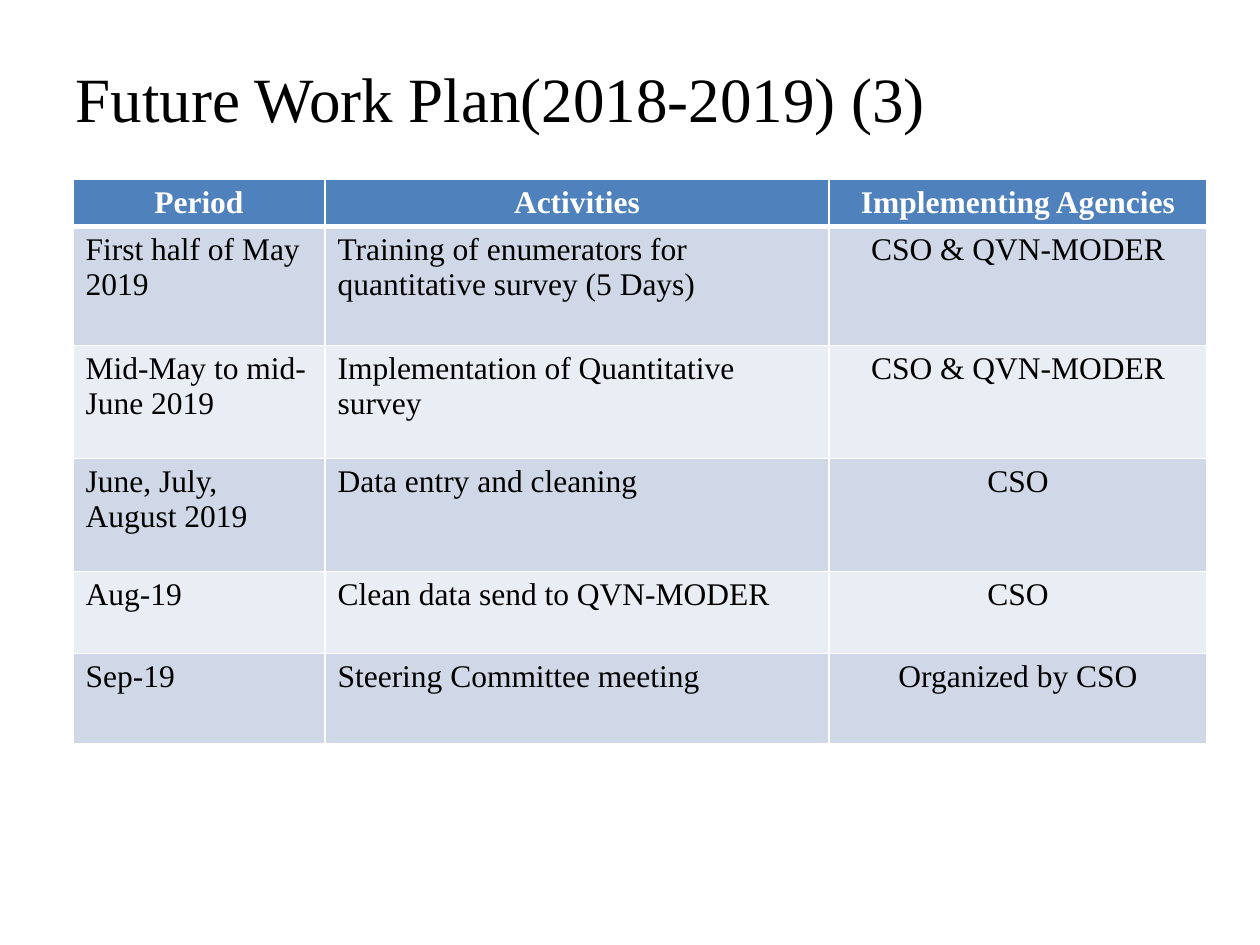
from dataclasses import dataclass
from typing import Any

from lxml.etree import SubElement
from pptx import Presentation
from pptx.dml.color import RGBColor
from pptx.enum.text import MSO_ANCHOR, PP_ALIGN
from pptx.oxml.ns import qn
from pptx.util import Pt

EMU_PER_PX = 914400 / 126
TITLE_ONLY = 5

HEADINGS = ["Period", "Activities", "Implementing Agencies"]
ACTIVITIES = [
    ["First half of May 2019",
     "Training of enumerators for quantitative survey (5 Days)", "CSO & QVN-MODER"],
    ["Mid-May to mid-June 2019", "Implementation of Quantitative survey", "CSO & QVN-MODER"],
    ["June, July, August 2019", "Data entry and cleaning", "CSO"],
    ["Aug-19", "Clean data send to QVN-MODER", "CSO"],
    ["Sep-19", "Steering Committee meeting", "Organized by CSO"],
]
COLUMN_WIDTHS = [252, 504, 378]
ROW_HEIGHTS = [47, 119, 113, 113, 82, 90]


def px(length):
    return round(length * EMU_PER_PX)


def colour(value):
    return RGBColor.from_string(value)


def write(frame, text, *, font, size, ink, bold=False, align=PP_ALIGN.LEFT):
    para = frame.paragraphs[0]
    para.alignment = align
    span = para.add_run()
    span.text = text
    span.font.name = font
    span.font.size = Pt(size)
    span.font.bold = bold
    span.font.color.rgb = colour(ink)


def add_borders(cell, value, **widths):
    """Draw cell edges; widths are points keyed by L, R, T and B, in that order."""
    properties = cell._tc.get_or_add_tcPr()
    for edge, width in widths.items():
        line = SubElement(properties, qn(f"a:ln{edge}"), w=str(Pt(width)))
        fill = SubElement(line, qn("a:solidFill"))
        SubElement(fill, qn("a:srgbClr"), val=value)


@dataclass
class PlanSlide:
    page: Any
    font: str = "Times New Roman"
    ink: str = "000000"
    paper: str = "FFFFFF"
    header: str = "4F81BD"
    bands: tuple = ("D0D8E8", "E9EDF4")

    def title(self, text, left, top, width, height):
        box = self.page.shapes.title
        box.left, box.top, box.width, box.height = map(px, (left, top, width, height))
        box.text_frame.vertical_anchor = MSO_ANCHOR.MIDDLE
        write(box.text_frame, text, font=self.font, size=36, ink=self.ink)

    def table(self, rows, left, top, widths, heights):
        """Add a table whose first row is the header and last column is centred."""
        frame = self.page.shapes.add_table(
            len(heights), len(widths), px(left), px(top), px(sum(widths)), px(sum(heights)))
        table = frame.table
        for column, width in zip(table.columns, widths):
            column.width = px(width)
        for row, height in zip(table.rows, heights):
            row.height = px(height)
        for i, texts in enumerate(rows):
            for j, text in enumerate(texts):
                self.cell(table.cell(i, j), text, i, j == len(widths) - 1)

    def cell(self, cell, text, row, centred):
        is_header = row == 0
        add_borders(cell, self.paper, L=1, R=1,
                    T=3 if row == 1 else 1, B=3 if is_header else 1)
        cell.fill.solid()
        cell.fill.fore_color.rgb = colour(
            self.header if is_header else self.bands[(row - 1) % 2])
        write(cell.text_frame, text, font=self.font, size=18, bold=is_header,
              ink=self.paper if is_header else self.ink,
              align=PP_ALIGN.CENTER if is_header or centred else PP_ALIGN.LEFT)


def main():
    deck = Presentation()
    deck.slide_width, deck.slide_height = px(1260), px(945)
    slide = PlanSlide(deck.slides.add_slide(deck.slide_layouts[TITLE_ONLY]))
    slide.title("Future Work Plan(2018-2019) (3)", 63, 37, 1134, 120)
    slide.table([HEADINGS, *ACTIVITIES], 73, 179, COLUMN_WIDTHS, ROW_HEIGHTS)
    deck.save("out.pptx")


if __name__ == "__main__":
    main()
